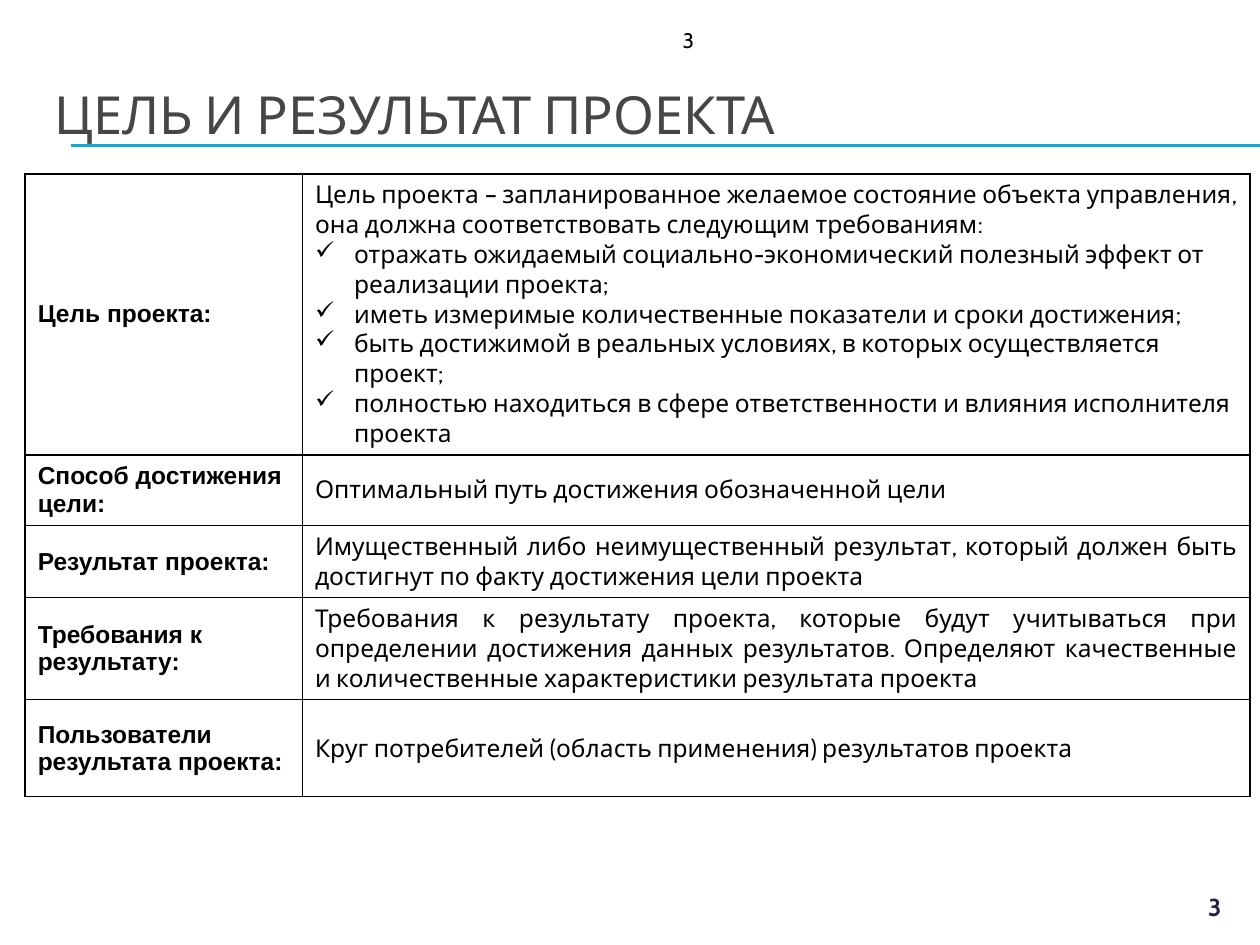
"""Build the slide on the goal and result of a project."""
import pptx
import pptx.util
import pptx.dml.color
import pptx.enum.shapes
import pptx.enum.text
import pptx.oxml
import pptx.oxml.ns
import lxml.etree

Inches = pptx.util.Inches
Pt = pptx.util.Pt
RGB = pptx.dml.color.RGBColor
Align = pptx.enum.text.PP_ALIGN
Anchor = pptx.enum.text.MSO_ANCHOR
qn = pptx.oxml.ns.qn

BLACK = RGB(0x00, 0x00, 0x00)
GREY = RGB(0x46, 0x46, 0x46)
TEAL = RGB(0x2D, 0xA2, 0xBF)
NAVY = RGB(0x23, 0x26, 0x3C)

COLS = [2.2, 7.52]
ROWS = [
    (2.13, "Цель проекта:", [
        "Цель проекта – запланированное желаемое состояние объекта управления, "
        "она должна соответствовать следующим требованиям:",
        "отражать ожидаемый социально-экономический полезный эффект от реализации проекта;",
        "иметь измеримые количественные показатели и сроки достижения;",
        "быть достижимой в реальных условиях, в которых осуществляется проект;",
        "полностью находиться в сфере ответственности и влияния исполнителя проекта"]),
    (0.56, "Способ достижения цели:", ["Оптимальный путь достижения обозначенной цели"]),
    (0.56, "Результат проекта:", [
        "Имущественный либо неимущественный результат, который должен быть "
        "достигнут по факту достижения цели проекта"]),
    (0.79, "Требования к результату:", [
        "Требования к результату проекта, которые будут учитываться при определении "
        "достижения данных результатов. Определяют качественные и количественные "
        "характеристики результата проекта"]),
    (0.77, "Пользователи результата проекта:", [
        "Круг потребителей (область применения) результатов проекта"]),
]


class Deck:
    """Hold the style and the current slide."""

    head = "Arial"
    body = "Cabin"
    size = 14

    def __init__(self):
        self.prs = pptx.Presentation()
        self.prs.slide_width, self.prs.slide_height = Inches(10), Inches(7.5)
        self.slide = self.prs.slides.add_slide(self.prs.slide_layouts[5])

    def style(self, para, font, size, color, bold=False):
        """Format each run of a paragraph."""
        for run in para.runs:
            run.font.name, run.font.size = font, Pt(size)
            run.font.bold, run.font.color.rgb = bold, color

    def rule(self, x, y, end):
        """Draw a level teal line."""
        line = self.slide.shapes.add_connector(
            pptx.enum.shapes.MSO_CONNECTOR.STRAIGHT,
            Inches(x), Inches(y), Inches(end), Inches(y))
        line.line.color.rgb, line.line.width = TEAL, Pt(0.75)
        lxml.etree.SubElement(line._element.spPr, qn("a:effectLst"))

    def title(self, text, x, y, w, h):
        """Fill and place the title."""
        shape = self.slide.shapes.title
        shape.left, shape.top = Inches(x), Inches(y)
        shape.width, shape.height = Inches(w), Inches(h)
        frame = shape.text_frame
        frame.text, frame.vertical_anchor = text, Anchor.MIDDLE
        frame.paragraphs[0].alignment = Align.LEFT
        self.style(frame.paragraphs[0], self.body, 30, GREY)

    def label(self, text, x, y, w, h, size, color, bold=False, wrap=True, align=Align.LEFT):
        """Add a text box with one line."""
        frame = self.slide.shapes.add_textbox(
            Inches(x), Inches(y), Inches(w), Inches(h)).text_frame
        frame.text, frame.word_wrap = text, wrap
        frame.paragraphs[0].alignment = align
        self.style(frame.paragraphs[0], self.body, size, color, bold)

    def bullet(self, para):
        """Give a paragraph a check mark and a hanging indent."""
        props = para._p.get_or_add_pPr()
        props.set("marL", str(Inches(0.31)))
        props.set("indent", str(-Inches(0.31)))
        lxml.etree.SubElement(props, qn("a:buChar"), char="✓")

    def border(self, cell):
        """Draw black lines on all sides of a cell."""
        props = cell._tc.get_or_add_tcPr()
        for place, side in enumerate(("lnL", "lnR", "lnT", "lnB")):
            line = lxml.etree.Element(qn("a:" + side), w=str(Pt(1)))
            fill = lxml.etree.SubElement(line, qn("a:solidFill"))
            lxml.etree.SubElement(fill, qn("a:srgbClr"), val=str(BLACK))
            props.insert(place, line)

    def cell(self, cell, lines, font, bold=False, align=Align.LEFT):
        """Fill a cell, with a bullet on each line after the first."""
        cell.fill.background()
        self.border(cell)
        cell.vertical_anchor = Anchor.MIDDLE
        cell.text_frame.text = "\n".join(lines)
        for rank, para in enumerate(cell.text_frame.paragraphs):
            para.alignment = align
            if rank:
                self.bullet(para)
            self.style(para, font, self.size, BLACK, bold)

    def table(self, rows, x, y):
        """Add the table of terms and what they mean."""
        high = sum(row[0] for row in rows)
        grid = self.slide.shapes.add_table(
            len(rows), len(COLS), Inches(x), Inches(y),
            Inches(sum(COLS)), Inches(high)).table
        grid.first_row = grid.horz_banding = False
        for col, wide in zip(grid.columns, COLS):
            col.width = Inches(wide)
        for rank, (tall, term, lines) in enumerate(rows):
            grid.rows[rank].height = Inches(tall)
            align = Align.LEFT if len(lines) > 1 else Align.JUSTIFY
            self.cell(grid.cell(rank, 0), [term], self.head, bold=True)
            self.cell(grid.cell(rank, 1), lines, self.body, align=align)


def main():
    deck = Deck()
    for y in (1.15, 1.16):
        deck.rule(0.56, y, 10)
    deck.title("ЦЕЛЬ И РЕЗУЛЬТАТ ПРОЕКТА", 0.33, 0.44, 9.5, 0.92)
    deck.table(ROWS, 0.2, 1.38)
    deck.label("3", 5.32, 0.17, 0.3, 0.3, 12, BLACK, wrap=False)
    deck.label("3", 9.45, 7.03, 0.38, 0.31, 14, NAVY, bold=True, align=Align.CENTER)
    deck.prs.save("out.pptx")


if __name__ == "__main__":
    main()
